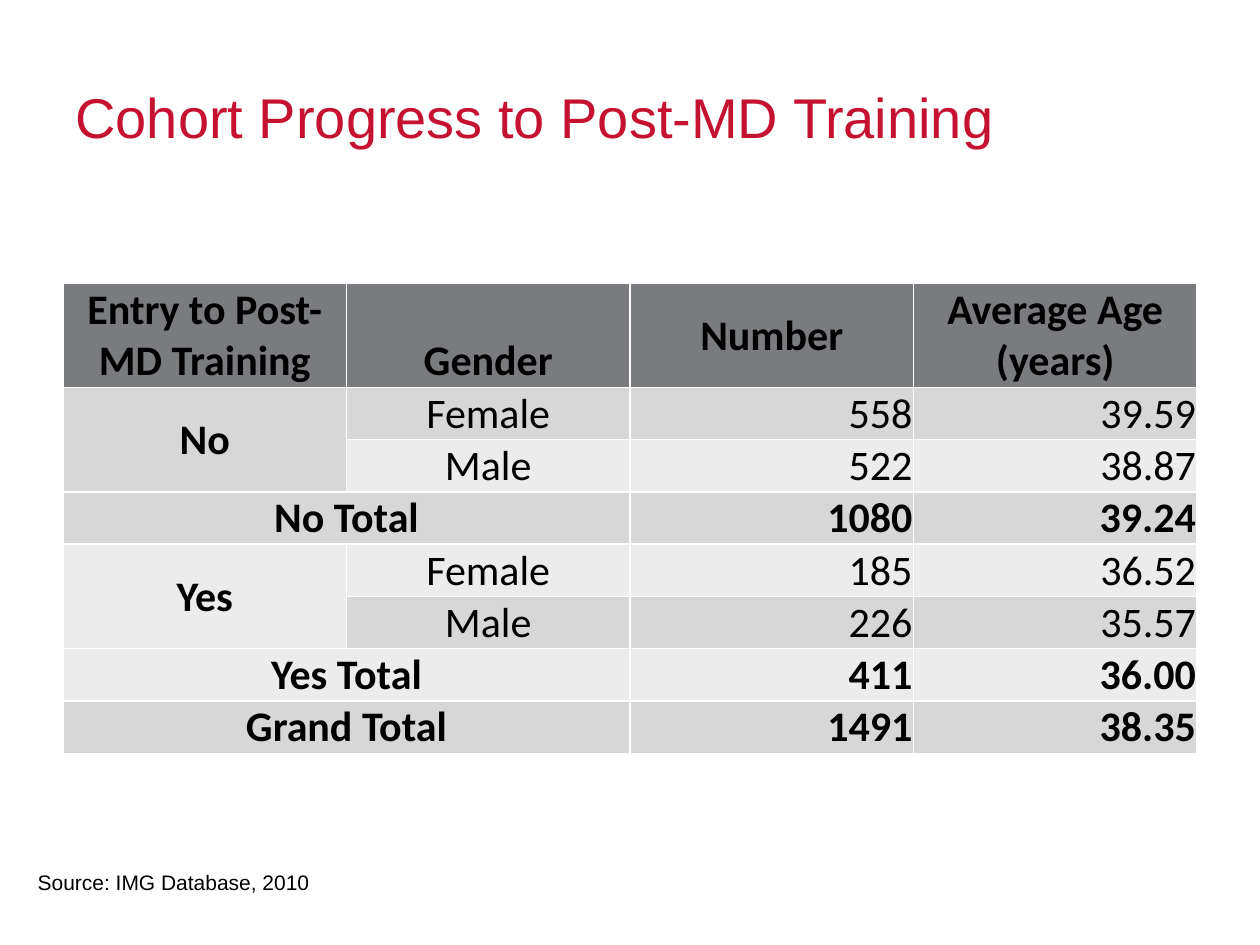
from pptx import Presentation
from pptx.dml.color import RGBColor
from pptx.enum.text import MSO_ANCHOR as Anchor, MSO_AUTO_SIZE as AutoSize, PP_ALIGN as Align
from pptx.util import Cm, Pt

BLACK = RGBColor(0x00, 0x00, 0x00)
RED = RGBColor(0xC4, 0x12, 0x30)
HEADER_GREY = RGBColor(0x79, 0x7B, 0x7E)
DARK_BAND = RGBColor(0xD7, 0xD7, 0xD8)
LIGHT_BAND = RGBColor(0xEC, 0xEC, 0xEC)

HEADINGS = ["Entry to Post-MD Training", "Gender", "Number", "Average Age (years)"]
COHORT_ROWS = [
    ["No", "Female", "558", "39.59"],
    ["", "Male", "522", "38.87"],
    ["No Total", "", "1080", "39.24"],
    ["Yes", "Female", "185", "36.52"],
    ["", "Male", "226", "35.57"],
    ["Yes Total", "", "411", "36.00"],
    ["Grand Total", "", "1491", "38.35"],
]


def write(frame, text, font="Arial", size=12, color=BLACK, bold=False, align=Align.LEFT):
    para = frame.paragraphs[0]
    para.alignment = align
    span = para.add_run()
    span.text = text
    span.font.name = font
    span.font.size = Pt(size)
    span.font.bold = bold
    span.font.color.rgb = color


class CohortSlide:
    def __init__(self, page):
        self.page = page

    def text_box(self, text, left, top, width, height, anchor=Anchor.TOP, wrap=True, **style):
        box = self.page.shapes.add_textbox(Cm(left), Cm(top), Cm(width), Cm(height))
        frame = box.text_frame
        frame.word_wrap = wrap
        frame.auto_size = AutoSize.NONE if wrap else AutoSize.SHAPE_TO_FIT_TEXT
        frame.vertical_anchor = anchor
        write(frame, text, **style)

    def cell(self, cell, text, fill, anchor, **style):
        cell.fill.solid()
        cell.fill.fore_color.rgb = fill
        cell.vertical_anchor = anchor
        cell.margin_left = cell.margin_right = cell.margin_top = Cm(0.02)
        cell.margin_bottom = 0
        if text:
            write(cell.text_frame, text, font="Calibri", size=24, **style)

    def cohort_table(self, left, top, width, row_height):
        """Add the table; a blank label joins the cell above it or to its left."""
        row_count = len(COHORT_ROWS) + 1
        table = self.page.shapes.add_table(
            row_count, len(HEADINGS), Cm(left), Cm(top), Cm(width), Cm(row_height * row_count)
        ).table
        for column, heading in enumerate(HEADINGS):
            anchor = Anchor.MIDDLE if heading == "Number" or column == 3 else Anchor.BOTTOM
            self.cell(table.cell(0, column), heading, HEADER_GREY, anchor,
                      bold=True, align=Align.CENTER)
        for row, values in enumerate(COHORT_ROWS, start=1):
            fill = DARK_BAND if row % 2 else LIGHT_BAND
            is_total = values[0].endswith("Total")
            for column, value in enumerate(values):
                is_label = column < 2
                self.cell(table.cell(row, column), value, fill,
                          Anchor.MIDDLE if is_label else Anchor.BOTTOM,
                          bold=is_total or column == 0,
                          align=Align.CENTER if is_label else Align.RIGHT)
            if is_total:
                table.cell(row, 0).merge(table.cell(row, 1))
            elif not values[0]:
                table.cell(row - 1, 0).merge(table.cell(row, 0))


def main():
    deck = Presentation()
    deck.slide_width, deck.slide_height = Cm(25.4), Cm(19.05)
    slide = CohortSlide(deck.slides.add_slide(deck.slide_layouts[6]))
    slide.text_box("Cohort Progress to Post-MD Training", 1.27, 0.76, 22.86, 3.18,
                   anchor=Anchor.MIDDLE, size=32, color=RED)
    slide.cohort_table(1.27, 5.72, 22.86, 1.04)
    slide.text_box("Source: IMG Database, 2010", 0.51, 17.4, 6.05, 0.76, wrap=False)
    deck.save("out.pptx")


if __name__ == "__main__":
    main()
